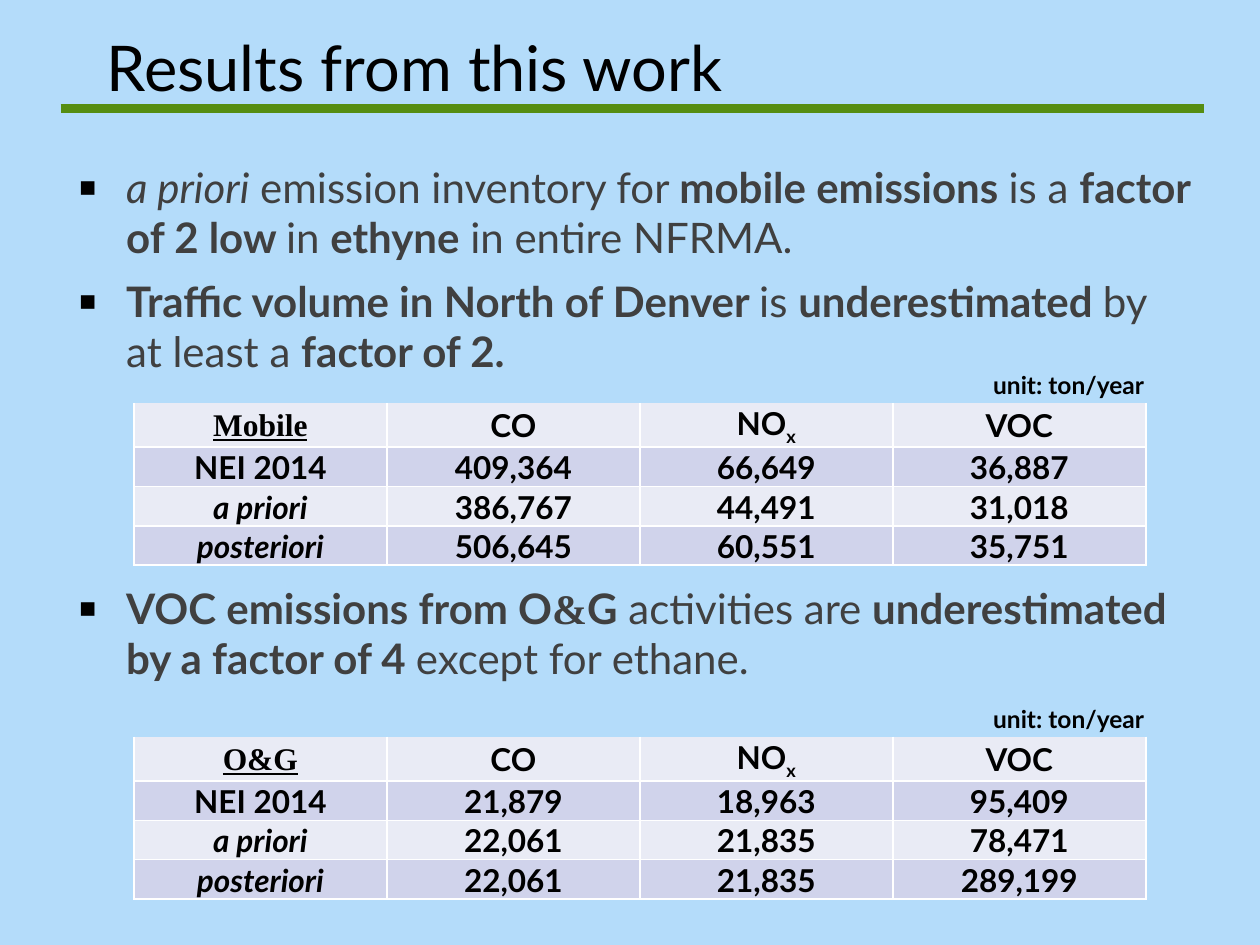
from lxml import etree
from pptx import Presentation
from pptx.dml.color import RGBColor
from pptx.enum.shapes import MSO_CONNECTOR
from pptx.enum.text import MSO_ANCHOR, MSO_AUTO_SIZE, PP_ALIGN
from pptx.oxml.ns import qn
from pptx.util import Cm, Pt

LINE = MSO_CONNECTOR.STRAIGHT
MIDDLE, TOP = MSO_ANCHOR.MIDDLE, MSO_ANCHOR.TOP
FIXED = MSO_AUTO_SIZE.NONE
LEFT, CENTER, RIGHT = PP_ALIGN.LEFT, PP_ALIGN.CENTER, PP_ALIGN.RIGHT
PLAIN = "{2D5ABB26-0587-4C30-8999-92F81FD0307C}"
SANS, SERIF = "Lato", "Times New Roman"
HEX = {"sky": "B4DCFA", "green": "568D11", "black": "000000", "gray": "404040",
       "pale": "E9EBF5", "lilac": "D0D3EB", "white": "FFFFFF"}

POINTS = [
    (4.8, [("a priori", "i"), (" emission inventory for ", ""), ("mobile emissions ", "b"),
           ("is a ", ""), ("factor of 2 low ", "b"), ("in ", ""), ("ethyne", "b"),
           (" in entire NFRMA.", "")]),
    (4.8, [("Traffic volume in North of Denver ", "b"), ("is ", ""),
           ("underestimated ", "b"), ("by at least a ", ""), ("factor of 2.", "b")]),
    (114.6, [("VOC emissions from O", "b"), ("&", "bs"), ("G", "b"), (" activities are ", ""),
             ("underestimated by a factor of 4 ", "b"), ("except for ethane.", "")]),
]
MOBILE = [("NEI 2014", "409,364", "66,649", "36,887"),
          ("a priori", "386,767", "44,491", "31,018"),
          ("posteriori", "506,645", "60,551", "35,751")]
WELLS = [("NEI 2014", "21,879", "18,963", "95,409"),
         ("a priori", "22,061", "21,835", "78,471"),
         ("posteriori", "22,061", "21,835", "289,199")]


def add(parent, tag, **attrs):
    """Append a DrawingML child and return it."""
    node = etree.SubElement(parent, qn(tag))
    for key, value in attrs.items():
        node.set(key, value)
    return node


class Deck:
    """Hold the style and the current slide."""

    def __init__(self):
        """Open a 4:3 deck with one tinted slide."""
        self.prs = Presentation()
        self.prs.slide_width, self.prs.slide_height = Cm(25.4), Cm(19.05)
        self.slide = self.prs.slides.add_slide(self.prs.slide_layouts[1])
        fill = self.slide.background.fill
        fill.solid()
        fill.fore_color.rgb = self.tint("sky")

    def tint(self, name):
        """Return a named colour."""
        return RGBColor.from_string(HEX[name])

    def run(self, para, text, size, color, marks=""):
        """Add a run; marks are b, i, u, s for serif and x for subscript."""
        run = para.add_run()
        run.text = text
        font = run.font
        font.name = SERIF if "s" in marks else SANS
        font.size, font.color.rgb = Pt(size), self.tint(color)
        font.bold, font.italic, font.underline = (key in marks for key in "biu")
        if "x" in marks:
            font._element.set("baseline", "-25000")

    def place(self, shape, left, top, width, height, anchor):
        """Move a placeholder and return its text frame."""
        shape.left, shape.top = Cm(left), Cm(top)
        shape.width, shape.height = Cm(width), Cm(height)
        frame = shape.text_frame
        frame.word_wrap, frame.auto_size = True, FIXED
        frame.vertical_anchor = anchor
        return frame

    def title(self, text):
        """Fill the title."""
        frame = self.place(self.slide.shapes.title, 1.9, 0.48, 21.6, 1.7, MIDDLE)
        para = frame.paragraphs[0]
        para.alignment = LEFT
        self.run(para, text, 36, "black")

    def rule(self, left, top, right):
        """Draw the rule below the title."""
        line = self.slide.shapes.add_connector(LINE, Cm(left), Cm(top), Cm(right), Cm(top))
        line.line.color.rgb, line.line.width = self.tint("green"), Pt(5)
        add(line._element.spPr, "a:effectLst")

    def body(self, points):
        """Fill the bullet list."""
        frame = self.place(self.slide.placeholders[1], 1.22, 3.12, 23.07, 15, TOP)
        for num, (gap, runs) in enumerate(points):
            para = frame.add_paragraph() if num else frame.paragraphs[0]
            para.space_before, para.space_after = Pt(gap), Pt(3)
            props = para._p.get_or_add_pPr()
            props.set("marL", str(Cm(1.07)))
            props.set("indent", str(-Cm(0.97)))
            add(add(props, "a:buClr"), "a:srgbClr", val=HEX["black"])
            add(props, "a:buSzPct", val="130000")
            add(props, "a:buChar", char="▪")
            for text, marks in runs:
                self.run(para, text, 24, "gray", marks)

    def cell(self, cell, runs, fill, sides, size=18, align=CENTER):
        """Fill one cell and draw the given sides."""
        cell.vertical_anchor = MIDDLE
        cell.margin_left = cell.margin_right = cell.margin_top = Cm(0.03)
        cell.margin_bottom = 0
        para = cell.text_frame.paragraphs[0]
        para.alignment, para.space_before = align, Pt(3)
        for text, marks in runs:
            self.run(para, text, size, "black", "b" + marks)
        if not runs:
            add(para._p, "a:endParaRPr", sz=str(size * 100))
        props = cell._tc.get_or_add_tcPr()
        for side in sides:
            edge = add(props, "a:ln" + side, w=str(Pt(1)))
            add(add(edge, "a:solidFill"), "a:srgbClr", val=HEX["white"])
        if fill:
            cell.fill.solid()
            cell.fill.fore_color.rgb = self.tint(fill)
        else:
            cell.fill.background()

    def table(self, top, name, data):
        """Add an emission table with its unit row."""
        frame = self.slide.shapes.add_table(5, 4, Cm(2.7), Cm(top), Cm(20.4), Cm(3.98))
        table = frame.table
        table.first_row = table.horz_banding = False
        table._tbl.tblPr.find(qn("a:tableStyleId")).text = PLAIN
        for row, high in zip(table.rows, (0.73, 0.88, 0.79, 0.79, 0.79)):
            row.height = Cm(high)
        for col in range(4):
            unit = [("unit: ton/year", "")] if col == 3 else []
            self.cell(table.cell(0, col), unit, None, "", 14, RIGHT)
        head = [[(name, "su")], [("CO", "")], [("NO", ""), ("x", "x")], [("VOC", "")]]
        for col, runs in enumerate(head):
            self.cell(table.cell(1, col), runs, "pale", "LRB")
        for row, line in enumerate(data, 2):
            fill = "pale" if row % 2 else "lilac"
            for col, text in enumerate(line):
                marks = "i" if col == 0 and row > 2 else ""
                self.cell(table.cell(row, col), [(text, marks)], fill, "LRTB")


def main():
    """Build the slide."""
    deck = Deck()
    deck.rule(1.22, 2.18, 24.28)
    deck.title("Results from this work")
    deck.body(POINTS)
    deck.table(7.39, "Mobile", MOBILE)
    deck.table(14.12, "O&G", WELLS)
    deck.prs.save("out.pptx")


if __name__ == "__main__":
    main()
